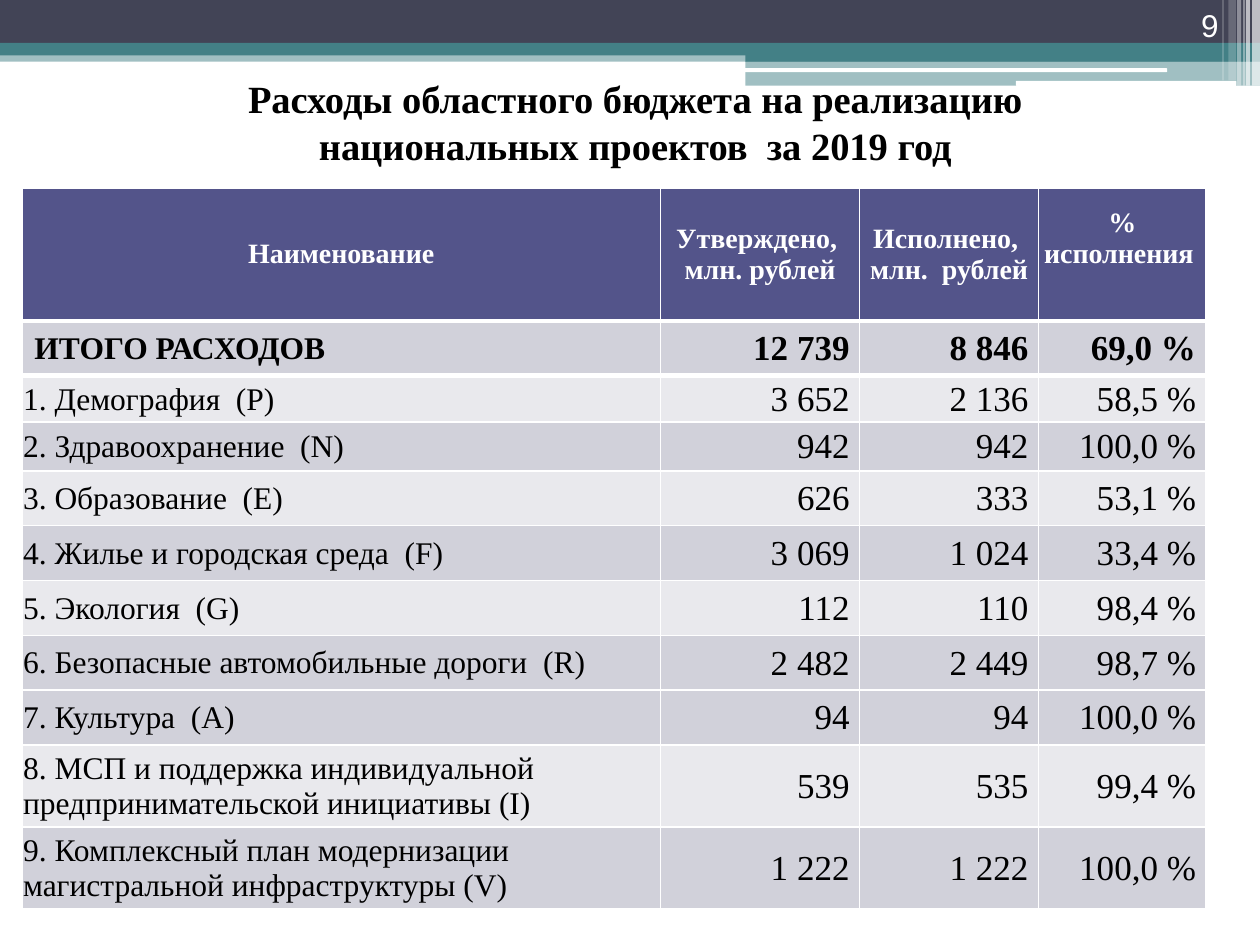
from typing import NamedTuple, Optional

from lxml import etree
from pptx import Presentation
from pptx.dml.color import RGBColor
from pptx.enum import shapes, text
from pptx.oxml import ns
from pptx.util import Pt

SERIF = "Times New Roman"
WHITE, BLACK, SLATE, TEAL = "FFFFFF", "000000", "424456", "438086"
HEADER_FILL, DARK_BAND, LIGHT_BAND = "53548A", "D1D1DA", "E9E9ED"
LEFT, CENTER, RIGHT = (text.PP_ALIGN.LEFT, text.PP_ALIGN.CENTER,
                       text.PP_ALIGN.RIGHT)


class Bar(NamedTuple):
    left: float
    top: float
    width: float
    height: float
    color: str
    opacity: int = 100
    rounded: bool = False


class Style(NamedTuple):
    size: float
    color: str = BLACK
    bold: bool = False
    align: text.PP_ALIGN = LEFT
    font: str = SERIF


class Expense(NamedTuple):
    name: str
    approved: str
    spent: str
    percent: str
    height: float
    fill: str


HEADER_HEIGHT = 76.2
HEADINGS = ["Наименование", "Утверждено, \nмлн. рублей",
            "Исполнено, \nмлн.  рублей", "% исполнения "]
COLUMN_WIDTHS = [365, 113.8, 102.2, 95.8]
EXPENSES = [
    Expense("ИТОГО РАСХОДОВ", "12 739", "8 846", "69,0 %", 31.2, DARK_BAND),
    Expense("1. Демография  (P)", "3 652", "2 136", "58,5 %", 26.5, LIGHT_BAND),
    Expense("2. Здравоохранение  (N)", "942", "942", "100,0 %", 28, DARK_BAND),
    Expense("3. Образование  (E)", "626", "333", "53,1 %", 31.3, LIGHT_BAND),
    Expense("4. Жилье и городская среда  (F)", "3 069", "1 024", "33,4 %",
            31.3, DARK_BAND),
    Expense("5. Экология  (G)", "112", "110", "98,4 %", 31.3, LIGHT_BAND),
    Expense("6. Безопасные автомобильные дороги  (R)", "2 482", "2 449",
            "98,7 %", 31.3, DARK_BAND),
    Expense("7. Культура  (A)", "94", "94", "100,0 %", 31.3, DARK_BAND),
    Expense("8. МСП и поддержка индивидуальной предпринимательской "
            "инициативы (I)", "539", "535", "99,4 %", 46.9, LIGHT_BAND),
    Expense("9. Комплексный план модернизации магистральной "
            "инфраструктуры (V)", "1 222", "1 222", "100,0 %", 46.9, DARK_BAND),
]

BANNER = [
    Bar(0, 28.8, 720, 6.5, TEAL, 50),
    Bar(0, 0, 720, 24.5, SLATE),
    Bar(0, 24.5, 720, 7.2, TEAL),
    Bar(426, 28, 294, 7.2, TEAL),
    Bar(426, 35, 294, 14, TEAL, 50),
    Bar(425.5, 39, 241.5, 2.2, WHITE, rounded=True),
    Bar(580.5, 46.2, 126, 2.9, WHITE, rounded=True),
    # Vertical stripes in the corner
    Bar(715.5, 0, 4.5, 49, WHITE, 65),
    Bar(712, 0, 2.2, 49, WHITE, 65),
    Bar(710.5, 0, 0.8, 49, WHITE, 60),
    Bar(707, 0, 2.2, 49, WHITE, 40),
    Bar(702, 0, 4.3, 46, WHITE, 20),
    Bar(698.5, 0, 0.8, 46, WHITE, 30),
]


def paint(fill, color: str, opacity: int = 100) -> None:
    fill.solid()
    fill.fore_color.rgb = RGBColor.from_string(color)
    if opacity < 100:
        tint = fill._xPr.find(".//" + ns.qn("a:srgbClr"))
        etree.SubElement(tint, ns.qn("a:alpha"), val=str(opacity * 1000))


def draw_bar(slide, bar: Bar) -> None:
    kind = shapes.MSO_SHAPE
    strip = slide.shapes.add_shape(
        kind.ROUNDED_RECTANGLE if bar.rounded else kind.RECTANGLE,
        Pt(bar.left), Pt(bar.top), Pt(bar.width), Pt(bar.height))
    strip.shadow.inherit = False
    strip.line.fill.background()
    paint(strip.fill, bar.color, bar.opacity)


def write(frame, words: str, style: Style) -> None:
    for index, line in enumerate(words.split("\n")):
        paragraph = frame.paragraphs[0] if index == 0 else frame.add_paragraph()
        paragraph.add_run().text = line
        paragraph.alignment = style.align
        font = paragraph.font
        font.name, font.size, font.bold = style.font, Pt(style.size), style.bold
        font.color.rgb = RGBColor.from_string(style.color)


def draw_label(slide, left: float, top: float, width: float, height: float,
               words: str, style: Style,
               anchor: text.MSO_ANCHOR = text.MSO_ANCHOR.TOP) -> None:
    frame = slide.shapes.add_textbox(
        Pt(left), Pt(top), Pt(width), Pt(height)).text_frame
    frame.word_wrap = True
    frame.vertical_anchor = anchor
    write(frame, words, style)


def set_borders(cell, top: float, bottom: float) -> None:
    properties = cell._tc.get_or_add_tcPr()
    for side, width in (("L", 1), ("R", 1), ("T", top), ("B", bottom)):
        edge = etree.SubElement(properties, ns.qn(f"a:ln{side}"),
                                w=str(Pt(width)))
        solid = etree.SubElement(edge, ns.qn("a:solidFill"))
        etree.SubElement(solid, ns.qn("a:srgbClr"), val=WHITE)


def fill_cell(cell, words: str, style: Style, fill: str,
              margins: tuple, top: float = 1, bottom: float = 1) -> None:
    set_borders(cell, top, bottom)
    paint(cell.fill, fill)
    (cell.margin_left, cell.margin_top,
     cell.margin_right, cell.margin_bottom) = map(Pt, margins)
    cell.vertical_anchor = text.MSO_ANCHOR.MIDDLE
    write(cell.text_frame, words, style)


def draw_expenses(slide, left: float, top: float) -> None:
    heights = [HEADER_HEIGHT] + [expense.height for expense in EXPENSES]
    table = slide.shapes.add_table(
        len(heights), len(COLUMN_WIDTHS), Pt(left), Pt(top),
        Pt(sum(COLUMN_WIDTHS)), Pt(sum(heights))).table
    table.horz_banding = False
    for column, width in zip(table.columns, COLUMN_WIDTHS):
        column.width = Pt(width)
    for row, height in zip(table.rows, heights):
        row.height = Pt(height)

    # Column headings; the last one sits higher than the others
    heading_style = Style(16, WHITE, True, CENTER)
    for column, heading in enumerate(HEADINGS):
        is_last = column == len(HEADINGS) - 1
        fill_cell(table.cell(0, column), heading, heading_style, HEADER_FILL,
                  (1.4, 2.9, 1.4, 20.9 if is_last else 2.9), bottom=3)

    # Total, then the projects
    for row, expense in enumerate(EXPENSES, start=1):
        is_total = row == 1
        edges = (3 if row <= 2 else 1, 3 if is_total else 1)
        name_margins = (7.2, 3.6, 7.2, 3.6) if is_total else (0.7, 0.7, 0.7, 0)
        fill_cell(table.cell(row, 0), expense.name, Style(18, bold=is_total),
                  expense.fill, name_margins, *edges)
        figures = (expense.approved, expense.spent, expense.percent)
        for column, figure in enumerate(figures, start=1):
            fill_cell(table.cell(row, column), figure,
                      Style(20, bold=is_total, align=RIGHT),
                      expense.fill, (0.7, 0.7, 5.8, 0), *edges)


def main() -> None:
    deck = Presentation()
    deck.slide_width, deck.slide_height = Pt(720), Pt(540)
    slide = deck.slides.add_slide(deck.slide_layouts[6])

    # Banner across the top
    for bar in BANNER:
        draw_bar(slide, bar)

    # Title, table and page number
    draw_label(slide, 0, 39.6, 731.5, 60.5,
               "Расходы областного бюджета на реализацию \n"
               "национальных проектов  за 2019 год ",
               Style(22, bold=True, align=CENTER))
    draw_expenses(slide, 12.5, 107.3)
    draw_label(slide, 643.7, 0, 59.8, 28.8, "9",
               Style(18, WHITE, align=RIGHT, font="Arial"),
               text.MSO_ANCHOR.BOTTOM)
    deck.save("out.pptx")


if __name__ == "__main__":
    main()
